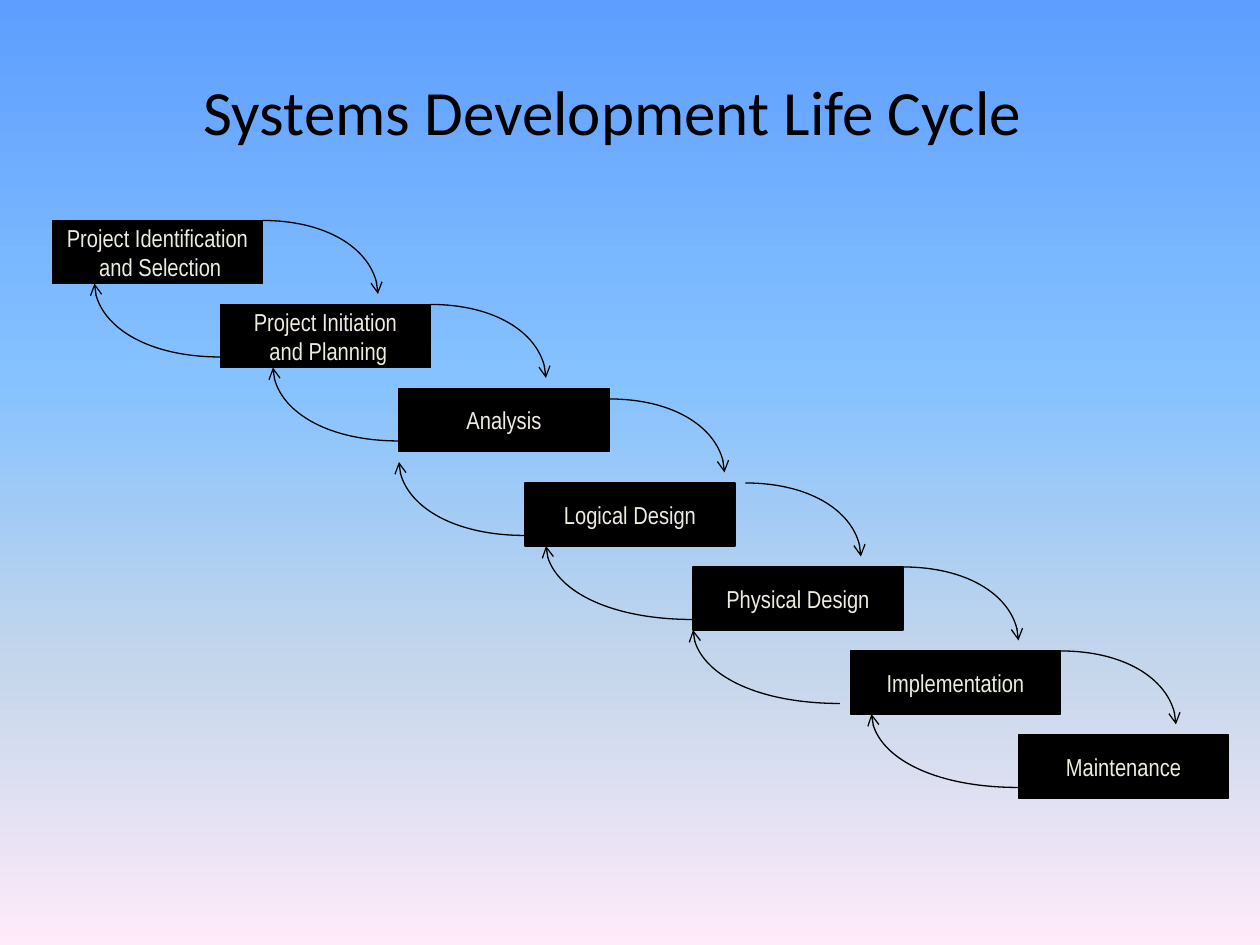
from pptx import Presentation
from pptx.dml.color import RGBColor
from pptx.enum.shapes import MSO_SHAPE
from pptx.enum.text import MSO_ANCHOR, PP_ALIGN
from pptx.oxml.ns import qn
from pptx.util import Inches, Pt
from lxml.etree import SubElement

TITLE = "Systems Development Life Cycle "
BLACK = RGBColor(0x00, 0x00, 0x00)
CREAM = RGBColor(0xEE, 0xEC, 0xE1)
SKY = [(0, RGBColor(0x5E, 0x9E, 0xFF)), (40, RGBColor(0x85, 0xC2, 0xFF)),
       (70, RGBColor(0xC4, 0xD6, 0xEB)), (100, RGBColor(0xFF, 0xEB, 0xFA))]

# Positions count in grid steps of one twelfth of an inch.
PHASES = [("Project Identification\n and Selection", 5, 21),
          ("Project Initiation\n and Planning", 21, 29),
          ("Analysis", 38, 37),
          ("Logical Design", 50, 46),
          ("Physical Design", 66, 54),
          ("Implementation", 81, 62),
          ("Maintenance", 97, 70)]
FORWARD_SHIFTS = {"Analysis": (0, 1), "Logical Design": (1, 0)}
BACK_SHIFTS = {"Implementation": -1}
BACK_WIDTHS = [12, 12, 12, 14, 14, 14]
BOX_WIDTH, BOX_HEIGHT = 20, 6
FORWARD_WIDTH, ARC_HEIGHT = 11, 7
BACK_DROP = 5
ROUNDNESS = 0.55


def grid(steps):
    return Inches(steps / 12)


def paint_background(page):
    fill = page.background.fill
    fill.gradient()
    fill.gradient_angle = 270
    stops = page.background._cSld.find(".//" + qn("a:gsLst"))
    for stop in list(stops):
        stops.remove(stop)
    for percent, color in SKY:
        stop = SubElement(stops, qn("a:gs"), pos=str(percent * 1000))
        SubElement(stop, qn("a:srgbClr"), val=str(color))


def write(shape, text, font, size, color):
    frame = shape.text_frame
    frame.text = text
    frame.vertical_anchor = MSO_ANCHOR.MIDDLE
    for para in frame.paragraphs:
        para.alignment = PP_ALIGN.CENTER
        for span in para.runs:
            span.font.name = font
            span.font.size = Pt(size)
            span.font.color.rgb = color
    return frame


def outline(shape):
    shape.shadow.inherit = False
    shape.line.color.rgb = BLACK
    shape.line.width = Pt(0.75)


def add_phase(page, text, left, top):
    box = page.shapes.add_shape(MSO_SHAPE.RECTANGLE, grid(left), grid(top),
                                grid(BOX_WIDTH), grid(BOX_HEIGHT))
    box.fill.solid()
    box.fill.fore_color.rgb = BLACK
    outline(box)
    write(box, text, "Arial Narrow", 14, CREAM).word_wrap = False


def add_arc(page, x, y, width, height):
    builder = page.shapes.build_freeform(grid(x), grid(y))
    points = [(x + width * ROUNDNESS, y),
              (x + width, y + height * (1 - ROUNDNESS)),
              (x + width, y + height)]
    builder.add_line_segments([(grid(a), grid(b)) for a, b in points], close=False)
    arc = builder.convert_to_shape()
    arc.fill.background()
    outline(arc)
    track = arc._element.find(".//" + qn("a:path"))
    curve = SubElement(track, qn("a:cubicBezTo"))
    for segment in track.findall(qn("a:lnTo")):
        curve.append(segment[0])
        track.remove(segment)
    SubElement(arc.line._get_or_add_ln(), qn("a:tailEnd"), type="arrow")


def main():
    deck = Presentation()
    deck.slide_width, deck.slide_height = Inches(10), Inches(7.5)
    page = deck.slides.add_slide(deck.slide_layouts[6])
    paint_background(page)

    title = page.shapes.add_textbox(Inches(0.67), Inches(0.25), Inches(8.5), Inches(1.25))
    write(title, TITLE, "Calibri", 36, BLACK).word_wrap = True

    for phase in PHASES:
        add_phase(page, *phase)
    for name, left, top in PHASES[:-1]:
        dx, dy = FORWARD_SHIFTS.get(name, (0, 0))
        add_arc(page, left + BOX_WIDTH + dx, top + dy, FORWARD_WIDTH, ARC_HEIGHT)
    for (name, left, top), width in zip(PHASES[1:], BACK_WIDTHS):
        add_arc(page, left + BACK_SHIFTS.get(name, 0), top + BACK_DROP, -width, -ARC_HEIGHT)

    deck.save("out.pptx")


if __name__ == "__main__":
    main()
